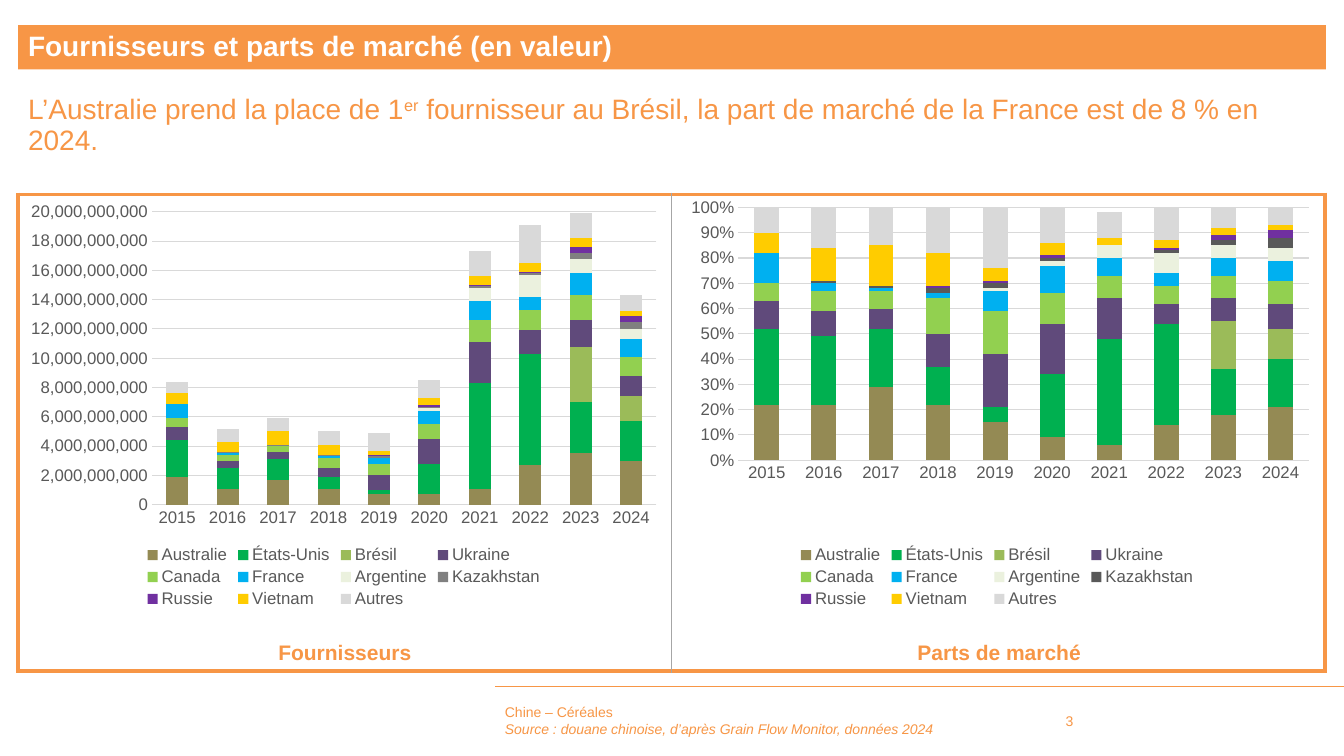
from lxml.etree import SubElement
from pptx import Presentation
from pptx.chart.data import CategoryChartData
from pptx.dml.color import RGBColor
from pptx.enum.chart import XL_CHART_TYPE, XL_LEGEND_POSITION, XL_TICK_MARK
from pptx.enum.shapes import MSO_CONNECTOR, MSO_SHAPE
from pptx.enum.text import MSO_ANCHOR, PP_ALIGN
from pptx.oxml import parse_xml
from pptx.oxml.ns import nsdecls, qn
from pptx.util import Inches, Pt

THEME = {
    "font": "Arial", "accent": "F79646", "white": "FFFFFF", "label": "595959",
    "grid": "D9D9D9", "divider": "A6A6A6",
    "heading": 20, "caption": 15, "axis": 12, "footer": 10,
}
COUNTRIES = {
    "Australie": "948A54", "États-Unis": "00B050", "Brésil": "9BBB59",
    "Ukraine": "604A7B", "Canada": "92D050", "France": "00B0F0",
    "Argentine": "EBF1DE", "Kazakhstan": "808080", "Russie": "7030A0",
    "Vietnam": "FFCC00", "Autres": "D9D9D9",
}
YEARS = [str(year) for year in range(2015, 2025)]
VALUES = [
    [19, 11, 17, 11, 7, 7, 11, 27, 35, 30],
    [25, 14, 14, 8, 3, 21, 72, 76, 35, 27],
    [0, 0, 0, 0, 0, 0, 0, 0, 38, 17],
    [9, 5, 5, 6, 10, 17, 28, 16, 18, 14],
    [6, 4, 4, 7, 8, 10, 15, 14, 17, 13],
    [10, 1, 0, 1, 4, 9, 13, 9, 15, 12],
    [0, 0, 0, 0, 0, 2, 9, 15, 10, 7],
    [0, 1, 1, 1, 1, 1, 1, 1, 4, 5],
    [0, 0, 0, 0, 1, 1, 1, 1, 4, 4],
    [7, 7, 9, 7, 3, 5, 6, 6, 6, 3],
    [8, 9, 9, 9, 12, 12, 17, 26, 17, 11],
]
SHARES = [
    [22, 22, 29, 22, 15, 9, 6, 14, 18, 21],
    [30, 27, 23, 15, 6, 25, 42, 40, 18, 19],
    [0, 0, 0, 0, 0, 0, 0, 0, 19, 12],
    [11, 10, 8, 13, 21, 20, 16, 8, 9, 10],
    [7, 8, 7, 14, 17, 12, 9, 7, 9, 9],
    [12, 3, 1, 2, 8, 11, 7, 5, 7, 8],
    [0, 0, 0, 0, 1, 2, 5, 8, 5, 5],
    [0, 1, 1, 2, 2, 1, 0, 1, 2, 4],
    [0, 0, 0, 1, 1, 1, 0, 1, 2, 3],
    [8, 13, 16, 13, 5, 5, 3, 3, 3, 2],
    [10, 17, 15, 18, 24, 15, 10, 14, 8, 7],
]


def style_font(font, size, color, **formats):
    font.name = THEME["font"]
    font.size = Pt(THEME[size])
    font.color.rgb = RGBColor.from_string(THEME[color])
    for name, value in formats.items():
        setattr(font, name, value)


def write_text(sp, lines, size, color="accent", anchor=MSO_ANCHOR.TOP,
               align=PP_ALIGN.LEFT, spacing=1.0):
    tf = sp.text_frame
    tf.word_wrap = True
    tf.vertical_anchor = anchor
    for i, runs in enumerate(lines):
        p = tf.add_paragraph() if i else tf.paragraphs[0]
        p.alignment = align
        p.line_spacing = spacing
        for text, formats in runs:
            r = p.add_run()
            r.text = text
            style_font(r.font, size, color, **formats)
            if text == "er":
                r.font._element.set("baseline", "30000")


prs = Presentation()
prs.slide_width, prs.slide_height = Inches(13.33), Inches(7.5)
s = prs.slides.add_slide(prs.slide_layouts[6])
accent = RGBColor.from_string(THEME["accent"])

rule = s.shapes.add_connector(MSO_CONNECTOR.STRAIGHT, Inches(4.91), Inches(6.81),
                              Inches(13.33), Inches(6.81))
rule.line.color.rgb = accent
rule.line.width = Pt(0.5)
SubElement(rule._element.spPr, qn("a:effectLst"))

table = s.shapes.add_table(1, 2, Inches(0.18), Inches(1.93),
                           Inches(12.96), Inches(4.73)).table
table.first_row = table.horz_banding = False
for cell, inner in zip(table.rows[0].cells, ("lnR", "lnL")):
    tcPr = cell._tc.get_or_add_tcPr()
    for side in ("lnL", "lnR", "lnT", "lnB"):
        color, width = ("divider", 0.75) if side == inner else ("accent", 3)
        ln = SubElement(tcPr, qn(f"a:{side}"), w=str(Pt(width)))
        fill = SubElement(ln, qn("a:solidFill"))
        SubElement(fill, qn("a:srgbClr"), val=THEME[color])
    cell.fill.background()

for left, caption in ((0.18, "Fournisseurs"), (6.67, "Parts de marché")):
    sp = s.shapes.add_textbox(Inches(left), Inches(6.3), Inches(6.48), Inches(0.35))
    write_text(sp, [[(caption, {"bold": True})]], "caption", align=PP_ALIGN.CENTER)

source = "Source : douane chinoise, d’après Grain Flow Monitor, données 2024"
for left, width, lines in (
    (4.91, 5.43, [[("Chine – Céréales", {})], [(source, {"italic": True})]]),
    (10.47, 0.99, [[("3", {})]]),
):
    sp = s.shapes.add_textbox(Inches(left), Inches(6.95), Inches(width), Inches(0.4))
    write_text(sp, lines, "footer", anchor=MSO_ANCHOR.MIDDLE)

banner = s.shapes.add_shape(MSO_SHAPE.RECTANGLE, Inches(0.18), Inches(0.25),
                            Inches(12.97), Inches(0.44))
banner.shadow.inherit = False
banner.fill.solid()
banner.fill.fore_color.rgb = accent
banner.line.fill.background()
title = "Fournisseurs et parts de marché (en valeur)"
write_text(banner, [[(title, {"bold": True})]], "heading", "white",
           MSO_ANCHOR.MIDDLE, spacing=0.9)

message = s.shapes.add_textbox(Inches(0.18), Inches(0.9), Inches(12.96), Inches(0.81))
write_text(message, [[
    ("L’Australie prend la place de 1", {}),
    ("er", {}),
    (" fournisseur au Brésil, la part de marché de la France est de 8 % en 2024.", {}),
]], "heading", spacing=0.9)

for left, width, rows, scale, top, step, fmt, recolor, plot in (
    (0.18, 6.46, VALUES, lambda v: v * 10**8, 20 * 10**9, 2 * 10**9, "#,##0", {}, None),
    (6.64, 6.5, SHARES, lambda v: v / 100, 1, 0.1, "0%", {"Kazakhstan": "595959"},
     {"x": 0.105, "y": 0.031, "w": 0.871, "h": 0.606}),
):
    data = CategoryChartData(number_format=fmt)
    data.categories = YEARS
    for country, row in zip(COUNTRIES, rows):
        data.add_series(country, [scale(v) for v in row])
    chart = s.shapes.add_chart(XL_CHART_TYPE.COLUMN_STACKED, Inches(left), Inches(1.93),
                               Inches(width), Inches(4.14), data).chart
    chart.has_title = False
    style_font(chart.font, "axis", "label")
    chart.has_legend = True
    chart.legend.position = XL_LEGEND_POSITION.BOTTOM
    chart.legend.include_in_layout = False
    style_font(chart.legend.font, "axis", "label")

    years, amounts = chart.category_axis, chart.value_axis
    for axis in (years, amounts):
        axis.major_tick_mark = axis.minor_tick_mark = XL_TICK_MARK.NONE
        style_font(axis.tick_labels.font, "axis", "label")
    for name, value in {"minimum_scale": 0, "maximum_scale": top, "major_unit": step,
                        "has_major_gridlines": True}.items():
        setattr(amounts, name, value)
    amounts.tick_labels.number_format = fmt
    amounts.tick_labels.number_format_is_linked = False
    amounts.format.line.fill.background()
    for line in (years.format.line, amounts.major_gridlines.format.line):
        line.color.rgb = RGBColor.from_string(THEME["grid"])
        line.width = Pt(0.75)

    bars = chart.plots[0]
    bars.gap_width, bars.overlap, bars.vary_by_categories = 130, 100, False
    for series in bars.series:
        color = recolor.get(series.name, COUNTRIES[series.name])
        series.format.fill.solid()
        series.format.fill.fore_color.rgb = RGBColor.from_string(color)
        series.invert_if_negative = False
    if plot:
        sizes = "".join(f'<c:{key} val="{value}"/>' for key, value in plot.items())
        area = chart._chartSpace.chart.plotArea
        for old in area.findall(qn("c:layout")):
            area.remove(old)
        area.insert(0, parse_xml(
            f'<c:layout {nsdecls("c")}><c:manualLayout><c:layoutTarget val="inner"/>'
            f'<c:xMode val="edge"/><c:yMode val="edge"/>{sizes}'
            '</c:manualLayout></c:layout>'))

prs.save("out.pptx")
